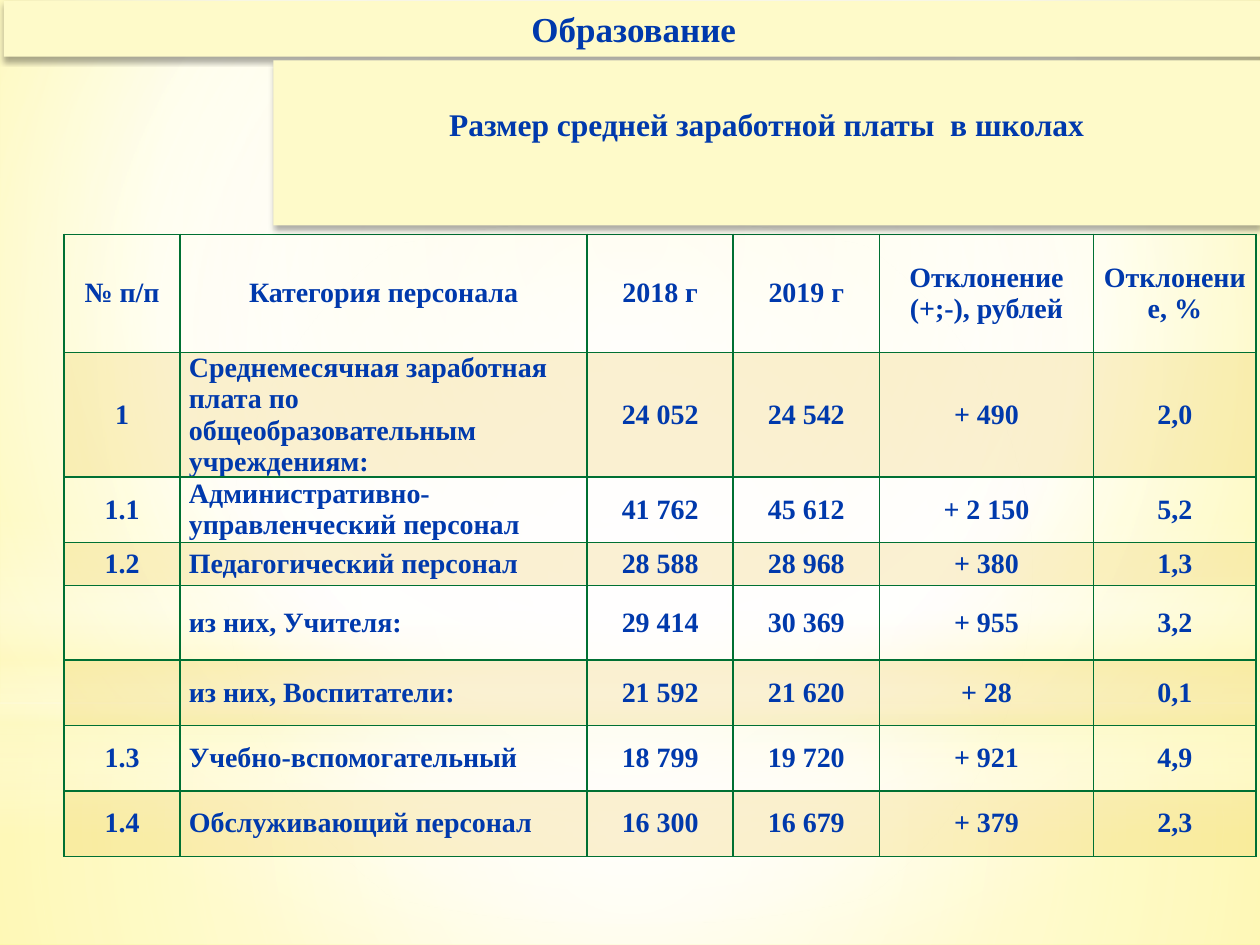
from lxml import etree
from pptx import Presentation
from pptx.dml.color import RGBColor
from pptx.enum.shapes import MSO_SHAPE as SHAPE
from pptx.enum.text import MSO_ANCHOR as ANCHOR, MSO_AUTO_SIZE as AUTO, PP_ALIGN as ALIGN
from pptx.oxml.ns import qn
from pptx.util import Inches, Pt

BLUE = RGBColor(0x00, 0x39, 0xAC)
GREEN = RGBColor(0x00, 0x70, 0x33)
GOLD = RGBColor(0xE7, 0xBC, 0x29)
CREAM = RGBColor(0xFE, 0xFA, 0xC9)
WHITE = RGBColor(0xFF, 0xFF, 0xFF)
PALE = RGBColor(0xFF, 0xF9, 0xB5)
YELLOW = RGBColor(0xFF, 0xF4, 0x6F)
BLACK = RGBColor(0, 0, 0)
FONT = "Times New Roman"
CENTER = (50, 50, 50, 50)

COLS = [0.92, 3.23, 1.16, 1.16, 1.7, 1.29]
HEIGHTS = [0.94, 0.81, 0.52, 0.34, 0.59, 0.52, 0.52, 0.52]
ROWS = [
    ["№ п/п", "Категория персонала", "2018 г", "2019 г", "Отклонение (+;-), рублей", "Отклонение, %"],
    ["1", "Среднемесячная заработная плата по общеобразовательным учреждениям:",
     "24 052", "24 542", "+ 490", "2,0"],
    ["1.1", "Административно-управленческий персонал", "41 762", "45 612", "+ 2 150", "5,2"],
    ["1.2", "Педагогический персонал", "28 588", "28 968", "+ 380", "1,3"],
    ["", "из них, Учителя:", "29 414", "30 369", "+ 955", "3,2"],
    ["", "из них, Воспитатели:", "21 592", "21 620", "+ 28", "0,1"],
    ["1.3", "Учебно-вспомогательный", "18 799", "19 720", "+ 921", "4,9"],
    ["1.4", "Обслуживающий персонал", "16 300", "16 679", "+ 379", "2,3"],
]


def add(parent, tag, **attrs):
    return etree.SubElement(parent, qn(tag), {k: str(v) for k, v in attrs.items()})


def add_color(parent, color, opacity=100):
    clr = add(parent, "a:srgbClr", val=color)
    if opacity < 100:
        add(clr, "a:alpha", val=opacity * 1000)


def set_gradient(fill, parent, stops, focus=None):
    fill.solid()
    grad = etree.Element(qn("a:gradFill"), rotWithShape="1")
    gs_lst = add(grad, "a:gsLst")
    for pos, color, opacity in stops:
        add_color(add(gs_lst, "a:gs", pos=pos * 1000), color, opacity)
    if focus:
        path = add(grad, "a:path", path="circle")
        add(path, "a:fillToRect", **{side: v * 1000 for side, v in zip("ltrb", focus)})
    else:
        add(grad, "a:lin", ang=90 * 60000, scaled=0)
    parent.replace(parent.find(qn("a:solidFill")), grad)


def style_text(p, size, align):
    p.alignment = align
    for r in p.runs:
        r.font.name, r.font.size, r.font.bold = FONT, Pt(size), True
        r.font.color.rgb = BLUE


def add_glow(s, kind, top, height, stops, focus=None):
    sp = s.shapes.add_shape(kind, 0, Inches(top), Inches(10), Inches(height))
    sp.shadow.inherit = False
    sp.line.fill.background()
    set_gradient(sp.fill, sp.element.spPr, stops, focus)


def add_backdrop(s):
    fill = s.background.fill
    fill.solid()
    set_gradient(fill, s.element.find(".//" + qn("p:bgPr")),
                 [(0, PALE, 100), (60, WHITE, 100), (100, YELLOW, 100)], (20, 10, 20, 60))
    add_glow(s, SHAPE.RECTANGLE, 5.58, 1.92,
             [(0, WHITE, 91), (37, WHITE, 76), (100, CREAM, 79)], CENTER)
    add_glow(s, SHAPE.RECTANGLE, 0, 5.58,
             [(0, WHITE, 89), (48, WHITE, 62), (100, CREAM, 79)], CENTER)
    add_glow(s, SHAPE.RECTANGLE, 4.12, 2.5,
             [(0, WHITE, 0), (29, WHITE, 30), (45, CREAM, 40),
              (55, WHITE, 26), (65, CREAM, 60), (100, WHITE, 0)])
    add_glow(s, SHAPE.OVAL, 1.75, 5.58, [(0, WHITE, 100), (56, WHITE, 0)], CENTER)


def style_cell(cell, text, align, banded):
    cell.text = text
    cell.vertical_anchor = ANCHOR.MIDDLE
    cell.margin_left = cell.margin_right = Inches(0.07)
    cell.margin_top = cell.margin_bottom = 0
    style_text(cell.text_frame.paragraphs[0], 16, align)
    tc_pr = cell._tc.get_or_add_tcPr()
    for side in "LRTB":
        ln = add(tc_pr, f"a:ln{side}", w=Pt(1))
        add_color(add(ln, "a:solidFill"), GREEN)
    if banded:
        cell.fill.solid()
        cell.fill.fore_color.rgb = GOLD
        add(tc_pr.find(qn("a:solidFill"))[0], "a:alpha", val=20000)
    else:
        cell.fill.background()


def add_salary_table(s, left, top, width, height):
    table = s.shapes.add_table(len(ROWS), len(COLS), left, top, width, height).table
    for col, w in zip(table.columns, COLS):
        col.width = Inches(w)
    for i, (row, h, texts) in enumerate(zip(table.rows, HEIGHTS, ROWS)):
        row.height = Inches(h)
        for j, (cell, text) in enumerate(zip(row.cells, texts)):
            align = ALIGN.LEFT if i and j == 1 else ALIGN.CENTER
            style_cell(cell, text, align, i % 2 == 1)


def place_banner(s, sp, text, size, left, top, width, height, inset):
    sp.left, sp.top, sp.width, sp.height = left, top, width, height
    sp.fill.solid()
    sp.fill.fore_color.rgb = CREAM
    sp.line.fill.background()
    effects = add(sp.element.spPr, "a:effectLst")
    shadow = add(effects, "a:outerShdw", blurRad=Pt(3.5), dist=Pt(2.2),
                 dir=90 * 60000, rotWithShape=0)
    add_color(shadow, BLACK, 32)
    tf = sp.text_frame
    tf.text = text
    tf.word_wrap, tf.auto_size = True, AUTO.NONE
    tf.vertical_anchor, tf.margin_top = ANCHOR.TOP, inset
    p = tf.paragraphs[0]
    p.space_before = Pt(0)
    style_text(p, size, ALIGN.CENTER)
    s.shapes.element.append(sp.element)


def main():
    prs = Presentation()
    prs.slide_width, prs.slide_height = Inches(10), Inches(7.5)
    s = prs.slides.add_slide(prs.slide_layouts[0])
    title, subtitle = s.placeholders
    add_backdrop(s)
    add_salary_table(s, Inches(0.51), Inches(1.86), Inches(9.46), Inches(5.02))
    place_banner(s, title, "Образование", 20,
                 Inches(0.03), Inches(0.01), Inches(10), Inches(0.44), Inches(0.05))
    place_banner(s, subtitle, "Размер средней заработной платы  в школах", 18,
                 Inches(2.17), Inches(0.48), Inches(7.83), Inches(1.31), Inches(0.35))
    prs.save("out.pptx")


if __name__ == "__main__":
    main()
